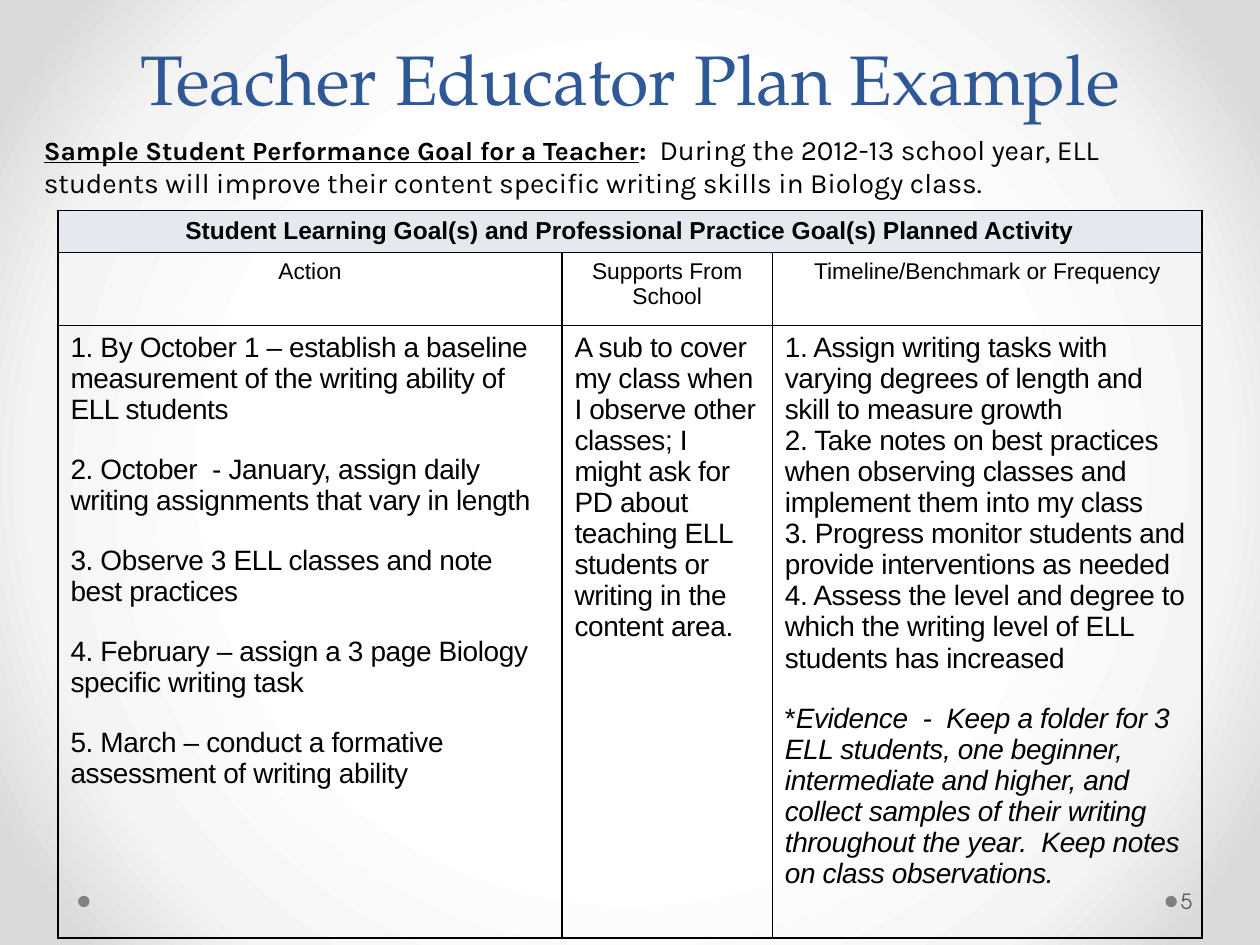
from pptx import Presentation
from pptx.dml.color import RGBColor
from pptx.enum.shapes import MSO_SHAPE
from pptx.enum.text import MSO_ANCHOR, MSO_AUTO_SIZE, PP_ALIGN
from pptx.oxml import parse_xml
from pptx.oxml.ns import nsdecls
from pptx.util import Inches, Pt

BLACK = RGBColor(0x00, 0x00, 0x00)
BLUE = RGBColor(0x2F, 0x58, 0x97)
PALE = RGBColor(0xE4, 0xE9, 0xEF)
GRAY = RGBColor(0x80, 0x80, 0x80)
DARK = RGBColor(0x59, 0x59, 0x59)

HEAD = {"name": "TeX Gyre Pagella", "size": Pt(40), "bold": False}
GOAL = {"name": "Karla", "size": Pt(15), "bold": True}
NOTE = {"name": "Karla", "size": Pt(16)}
PAGE = {"name": "TeX Gyre Adventor", "size": Pt(12)}
TOP = {"name": "Arial", "size": Pt(14), "bold": True}
LABEL = {"name": "Arial", "size": Pt(13), "bold": False}
BODY = {"name": "Arial", "size": Pt(16), "bold": False}
STOPS = [(0, "FFFFFF"), (50, "FFFFFF"), (76, "F4F4F4"), (92, "DADADA"), (100, "DADADA")]

STEPS = [
    "1. By October 1 – establish a baseline measurement of the writing ability of ELL students",
    "2. October  - January, assign daily writing assignments that vary in length",
    "3. Observe 3 ELL classes and note best practices",
    "4. February – assign a 3 page Biology specific writing task",
    "5. March – conduct a formative assessment of writing ability",
]
HELP = [
    "A sub to cover my class when I observe other classes; I might ask for PD about "
    "teaching ELL students or writing in the content area.",
]
MARKS = [
    "1. Assign writing tasks with varying degrees of length and skill to measure growth",
    "2. Take notes on best practices when observing classes and implement them into my class",
    "3. Progress monitor students and provide interventions as needed",
    "4. Assess the level and degree to which the writing level of ELL students has increased",
]
PROOF = (
    "Evidence  -  Keep a folder for 3 ELL students, one beginner, intermediate and higher, "
    "and collect samples of their writing throughout the year.  Keep notes on class observations."
)


class Deck:
    """Holds the deck, its current slide and the style of each element."""

    def __init__(self):
        self.prs = Presentation()
        self.prs.slide_width, self.prs.slide_height = Inches(10), Inches(7.5)
        self.slide = self.prs.slides.add_slide(self.prs.slide_layouts[5])

    def paint(self, stops):
        fill = self.slide.background.fill
        fill.gradient()
        grad = self.slide.element.find(".//{*}bgPr/{*}gradFill")
        marks = "".join(
            f'<a:gs pos="{pos * 1000}"><a:srgbClr val="{tint}"/></a:gs>' for pos, tint in stops
        )
        grad.getparent().replace(grad, parse_xml(
            f'<a:gradFill {nsdecls("a")} rotWithShape="1"><a:gsLst>{marks}</a:gsLst>'
            '<a:path path="circle"><a:fillToRect l="50000" t="50000" r="50000" b="50000"/>'
            '</a:path></a:gradFill>'
        ))

    def place(self, shape, box):
        for key, size in zip(("left", "top", "width", "height"), box):
            setattr(shape, key, Inches(size))

    def say(self, para, text, style, color=BLACK, **more):
        run = para.add_run()
        run.text = text
        for key, value in {**style, **more}.items():
            setattr(run.font, key, value)
        run.font.color.rgb = color
        return run

    def title(self, text, box):
        shape = self.slide.shapes.title
        self.place(shape, box)
        frame = shape.text_frame
        frame.auto_size = MSO_AUTO_SIZE.NONE
        frame.vertical_anchor = MSO_ANCHOR.BOTTOM
        para = frame.paragraphs[0]
        para.alignment, para.line_spacing = PP_ALIGN.CENTER, Pt(58)
        self.say(para, text, HEAD, BLUE)

    def text(self, box):
        frame = self.slide.shapes.add_textbox(*map(Inches, box)).text_frame
        frame.word_wrap = True
        return frame

    def dot(self, left, top, size):
        shape = self.slide.shapes.add_shape(
            MSO_SHAPE.OVAL, *map(Inches, (left, top, size, size))
        )
        shape.shadow.inherit = False
        shape.fill.solid()
        shape.fill.fore_color.rgb = GRAY
        shape.line.fill.background()

    def table(self, box, cols, rows):
        grid = self.slide.shapes.add_table(len(rows), len(cols), *map(Inches, box)).table
        grid.first_row = grid.horz_banding = False
        for col, size in zip(grid.columns, cols):
            col.width = Inches(size)
        for row, size in zip(grid.rows, rows):
            row.height = Inches(size)
        for cell in grid.iter_cells():
            cell.fill.background()
            self.edge(cell)
        return grid

    def edge(self, cell):
        props = cell._tc.get_or_add_tcPr()
        for spot, side in enumerate("LRTB"):
            props.insert(spot, parse_xml(
                f'<a:ln{side} {nsdecls("a")} w="{Pt(1)}"><a:solidFill>'
                f'<a:srgbClr val="{BLACK}"/></a:solidFill></a:ln{side}>'
            ))

    def label(self, cell, text, style):
        para = cell.text_frame.paragraphs[0]
        para.alignment = PP_ALIGN.CENTER
        self.say(para, text, style)

    def tight(self, para, text, **more):
        run = self.say(para, text, BODY, **more)
        run.font._element.set("spc", "-20")

    def items(self, cell, lines, gap=0):
        frame = cell.text_frame
        for i, line in enumerate(lines):
            para = frame.add_paragraph() if i else frame.paragraphs[0]
            para.space_before = Pt(gap if i else 0)
            self.tight(para, line)


def main():
    deck = Deck()
    deck.paint(STOPS)
    for left in (9.25, 0.62):
        deck.dot(left, 7.11, 0.09)
    deck.title("Teacher Educator Plan Example", (0.5, 0, 9, 1))

    frame = deck.text((9.34, 6.95, 0.61, 0.4))
    frame.margin_left, frame.margin_right = Inches(0.03), Inches(0.05)
    frame.vertical_anchor = MSO_ANCHOR.MIDDLE
    deck.say(frame.paragraphs[0], "5", PAGE, DARK)

    para = deck.text((0.25, 1, 9.5, 1)).paragraphs[0]
    deck.say(para, "Sample Student Performance Goal for a Teacher", GOAL, underline=True)
    deck.say(para, ":  ", GOAL)
    deck.say(para, "During the 2012-13 school year, ELL students will improve their "
             "content specific writing skills in Biology class.", NOTE)

    grid = deck.table((0.46, 1.67, 9.08, 5.42), (4, 1.67, 3.41), (0.32, 0.58, 4.52))
    top = grid.cell(0, 0)
    top.merge(grid.cell(0, 2))
    top.fill.solid()
    top.fill.fore_color.rgb = PALE
    deck.label(top, "Student Learning Goal(s) and Professional Practice Goal(s) Planned Activity", TOP)
    names = ("Action", "Supports From School", "Timeline/Benchmark or Frequency")
    for col, name in enumerate(names):
        deck.label(grid.cell(1, col), name, LABEL)
    for col, (lines, gap) in enumerate(((STEPS, 16.5), (HELP, 0), (MARKS, 0))):
        deck.items(grid.cell(2, col), lines, gap)
    para = grid.cell(2, 2).text_frame.add_paragraph()
    para.space_before = Pt(16.5)
    deck.tight(para, "*")
    deck.tight(para, PROOF, italic=True)

    deck.prs.save("out.pptx")


if __name__ == "__main__":
    main()
